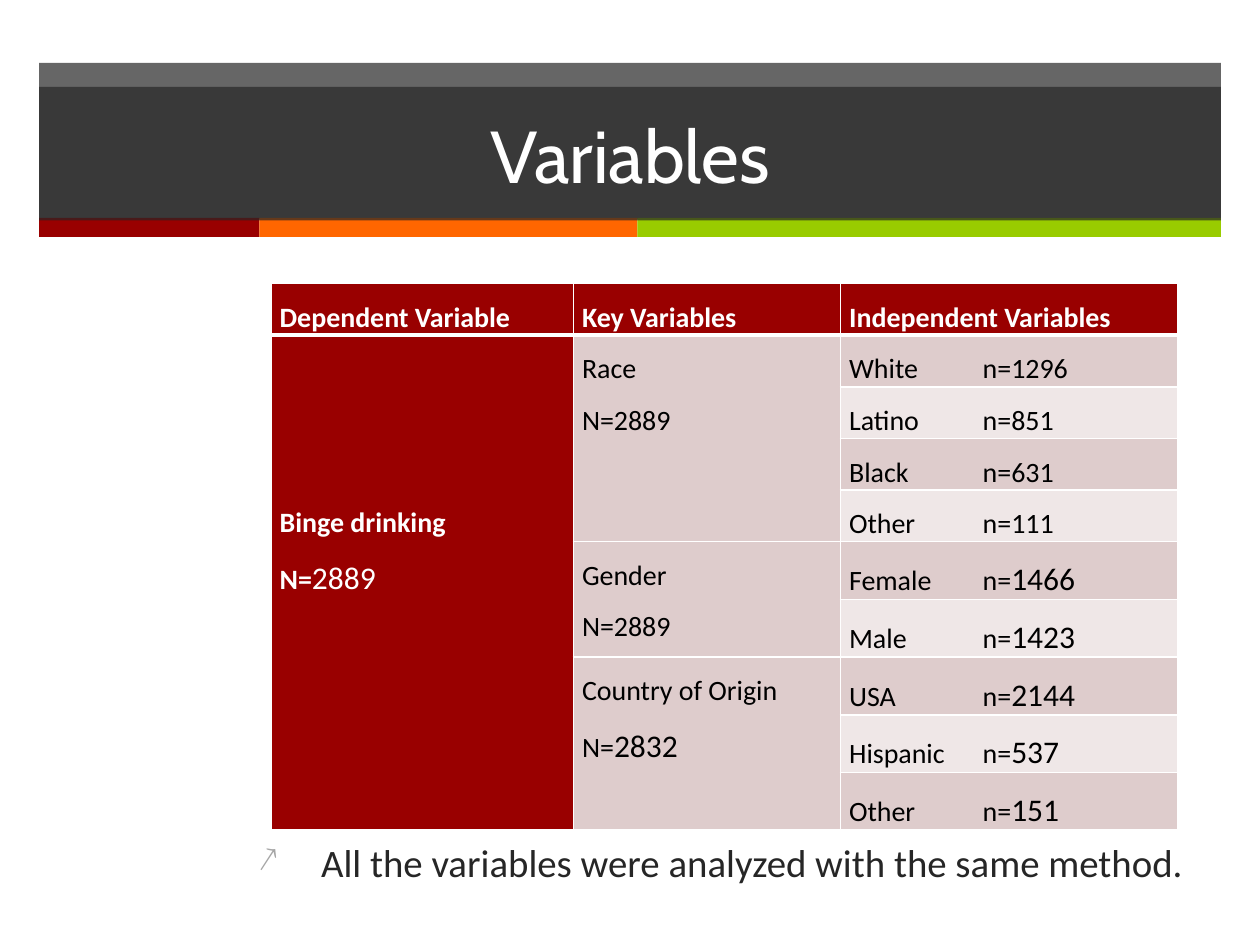
import dataclasses

import pptx
import pptx.dml.color
import pptx.enum.shapes
import pptx.enum.text
import pptx.oxml
import pptx.oxml.ns
import pptx.util
from pptx.util import Inches


@dataclasses.dataclass(frozen=True)
class Theme:
    """Hold the colours, fonts and type sizes of the slide."""
    white: str = "FFFFFF"
    black: str = "000000"
    dark: str = "262626"
    bullet: str = "A6A6A6"
    red: str = "990000"
    orange: str = "FF6600"
    green: str = "99CC00"
    bands: tuple = ("DECCCC", "EFE7E7")
    title_font: str = "Cabin"
    body_font: str = "Calibri"
    title_size: float = 42
    note_size: float = 22.2
    cell_size: float = 16
    count_size: float = 18


THEME = Theme()
COLUMN_WIDTHS = (2.4, 2.12, 2.68)
HEADERS = ("Dependent Variable", "Key Variables", "Independent Variables")
GROUPS = (
    ("Race", "2889", THEME.cell_size, THEME.cell_size,
     (("White", "1296"), ("Latino", "851"), ("Black", "631"), ("Other", "111"))),
    ("Gender", "2889", THEME.cell_size, THEME.count_size,
     (("Female", "1466"), ("Male", "1423"))),
    ("Country of Origin", "2832", THEME.count_size, THEME.count_size,
     (("USA", "2144"), ("Hispanic", "537"), ("Other", "151"))),
)


def rgb(color):
    """Turn a hex string into a colour."""
    return pptx.dml.color.RGBColor.from_string(color)


def append_xml(parent, xml):
    """Append one DrawingML element to a parent element."""
    namespace = pptx.oxml.ns.nsdecls("a")
    parent.append(pptx.oxml.parse_xml(xml.replace(" ", f" {namespace} ", 1)))


def add_text(paragraph, text, size=THEME.cell_size, color=THEME.black,
             font=THEME.body_font, bold=False):
    """Add a formatted run to a paragraph."""
    run = paragraph.add_run()
    run.text = text
    run.font.size = pptx.util.Pt(size)
    run.font.name = font
    run.font.bold = bold
    run.font.color.rgb = rgb(color)


def add_bar(slide, left, top, width, height, color, opacity=100):
    """Add a plain rectangle and return it."""
    shape = slide.shapes.add_shape(
        pptx.enum.shapes.MSO_SHAPE.RECTANGLE,
        Inches(left), Inches(top), Inches(width), Inches(height))
    shape.shadow.inherit = False
    shape.fill.solid()
    shape.fill.fore_color.rgb = rgb(color)
    shape.line.fill.background()
    if opacity < 100:
        fill_color = shape.fill._xPr.find(".//" + pptx.oxml.ns.qn("a:srgbClr"))
        append_xml(fill_color, f'<a:alpha val="{opacity * 1000}"/>')
    return shape


def add_banner(slide):
    """Draw the title banner with its three coloured stripes."""
    add_bar(slide, 0.31, 0.5, 9.38, 1.24, THEME.dark, opacity=70)
    left = 0.31
    for width, color in ((1.75, THEME.red), (3, THEME.orange), (4.63, THEME.green)):
        add_bar(slide, left, 1.73, width, 0.15, color)
        left += width
    title = add_bar(slide, 0.31, 0.69, 9.38, 1.06, THEME.dark, opacity=70)
    title.text_frame.vertical_anchor = pptx.enum.text.MSO_ANCHOR.MIDDLE
    paragraph = title.text_frame.paragraphs[0]
    paragraph.alignment = pptx.enum.text.PP_ALIGN.CENTER
    add_text(paragraph, "Variables", size=THEME.title_size, color=THEME.white,
             font=THEME.title_font)


def style_cell(cell, color, bottom=1):
    """Set the margins, white borders and fill of a cell."""
    cell.margin_left = cell.margin_right = Inches(0.07)
    cell.margin_top = cell.margin_bottom = 0
    properties = cell._tc.get_or_add_tcPr()
    for side, points in (("L", 1), ("R", 1), ("T", 1), ("B", bottom)):
        append_xml(properties, f'<a:ln{side} w="{pptx.util.Pt(points)}"><a:solidFill>'
                   f'<a:srgbClr val="{THEME.white}"/></a:solidFill></a:ln{side}>')
    cell.fill.solid()
    cell.fill.fore_color.rgb = rgb(color)


def cell_paragraph(cell, first=True):
    """Return the first or a new cell paragraph with wide line spacing."""
    frame = cell.text_frame
    paragraph = frame.paragraphs[0] if first else frame.add_paragraph()
    paragraph.line_spacing = 1.5
    return paragraph


def fill_total(cell, name, total, size, **style):
    """Write a variable name with its total below."""
    add_text(cell_paragraph(cell), name, **style)
    paragraph = cell_paragraph(cell, first=False)
    add_text(paragraph, "N=", **style)
    add_text(paragraph, total, **{**style, "size": size, "bold": False})


def fill_count(cell, name, count, size):
    """Write a category and its count, aligned by a tab stop."""
    paragraph = cell_paragraph(cell)
    append_xml(paragraph._p.get_or_add_pPr(),
               f'<a:tabLst ><a:tab pos="{Inches(1.06)}" algn="l"/></a:tabLst>')
    add_text(paragraph, f"{name}\tn=")
    add_text(paragraph, count, size=size)


def add_variable_table(slide):
    """Build the table of dependent, key and independent variables."""
    row_count = 1 + sum(len(group[-1]) for group in GROUPS)
    table = slide.shapes.add_table(
        row_count, len(HEADERS), Inches(2.15), Inches(2.25),
        Inches(sum(COLUMN_WIDTHS)), Inches(4.3)).table
    table.first_row = table.horz_banding = False
    for column, width in zip(table.columns, COLUMN_WIDTHS):
        column.width = Inches(width)
    for index, row in enumerate(table.rows):
        row.height = Inches(0.41)
        band = THEME.bands[(index + 1) % 2]
        colors = (THEME.red, THEME.bands[0], band) if index else (THEME.red,) * 3
        for cell, color in zip(row.cells, colors):
            style_cell(cell, color, bottom=1 if index else 3)
    for cell, header in zip(table.rows[0].cells, HEADERS):
        add_text(cell_paragraph(cell), header, color=THEME.white, bold=True)

    dependent = table.cell(1, 0)
    dependent.merge(table.cell(row_count - 1, 0))
    dependent.margin_top = Inches(1.22)
    fill_total(dependent, "Binge drinking", "2889", THEME.count_size,
               color=THEME.white, bold=True)
    start = 1
    for name, total, total_size, count_size, categories in GROUPS:
        key = table.cell(start, 1)
        key.merge(table.cell(start + len(categories) - 1, 1))
        fill_total(key, name, total, total_size)
        for row, (category, count) in enumerate(categories, start):
            fill_count(table.cell(row, 2), category, count, count_size)
        start += len(categories)


def add_note(slide):
    """Add the bulleted remark under the table."""
    frame = slide.shapes.add_textbox(
        Inches(1.95), Inches(6.61), Inches(7.74), Inches(0.75)).text_frame
    frame.word_wrap = True
    paragraph = frame.paragraphs[0]
    paragraph.space_before = pptx.util.Pt(20)
    properties = paragraph._p.get_or_add_pPr()
    properties.set("marL", str(Inches(0.5)))
    properties.set("indent", str(-Inches(0.5)))
    append_xml(properties, f'<a:buClr ><a:srgbClr val="{THEME.bullet}"/></a:buClr>')
    append_xml(properties, '<a:buSzPct val="90000"/>')
    append_xml(properties, '<a:buChar char="↗"/>')
    add_text(paragraph, "All the variables were analyzed with the same method.",
             size=THEME.note_size, color=THEME.dark)


def main():
    """Build and save the slide."""
    presentation = pptx.Presentation()
    presentation.slide_width = Inches(10)
    presentation.slide_height = Inches(7.5)
    slide = presentation.slides.add_slide(presentation.slide_layouts[6])
    add_banner(slide)
    add_variable_table(slide)
    add_note(slide)
    presentation.save("out.pptx")


if __name__ == "__main__":
    main()
